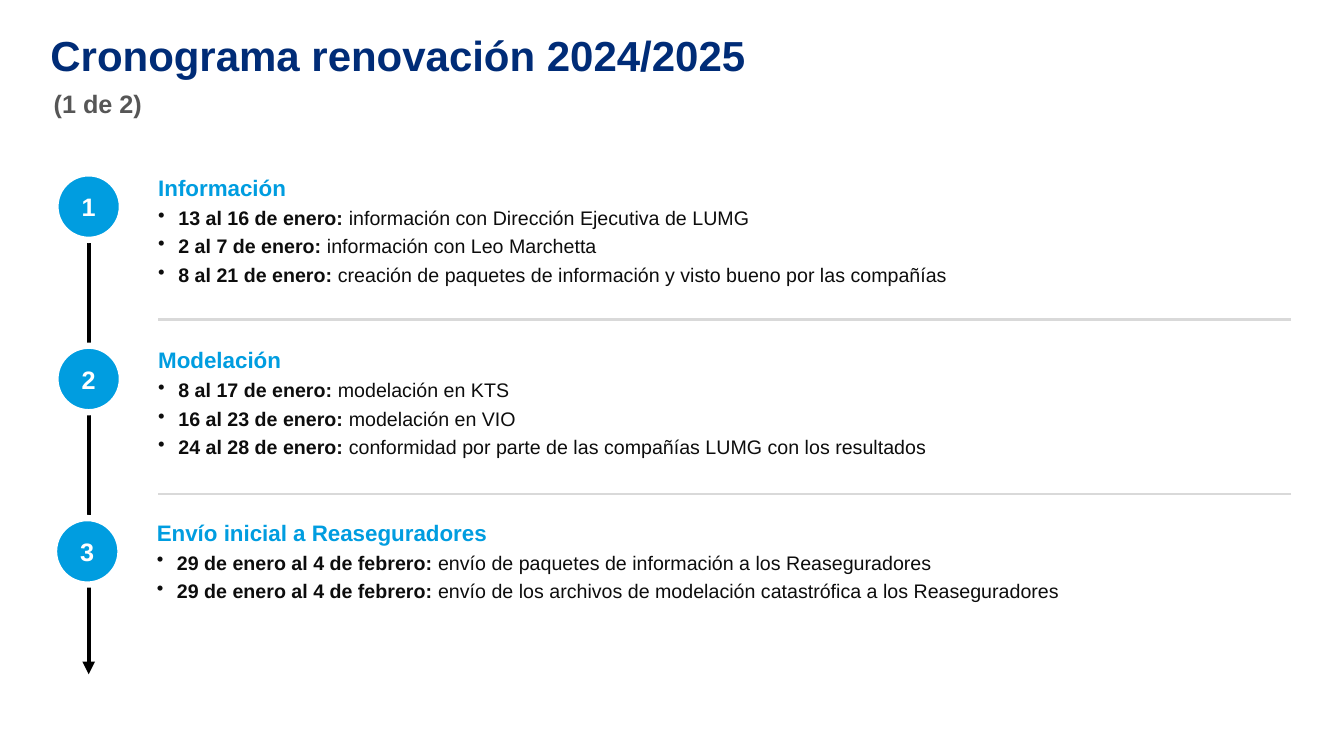
from dataclasses import dataclass

from lxml import etree
from pptx import Presentation
from pptx import util as u
from pptx.dml.color import RGBColor
from pptx.enum import shapes, text
from pptx.oxml.ns import qn


@dataclass(frozen=True)
class Theme:
    font: str = "Arial"
    navy: str = "002C77"
    grey: str = "565656"
    blue: str = "009DE0"
    ink: str = "0D0D0D"
    black: str = "000000"
    rule: str = "D9D9D9"
    white: str = "FFFFFF"
    title: int = 30
    subtitle: int = 18
    heading: int = 16
    body: int = 14


STAGES = [
    ("Información", [
        ("13 al 16 de enero: ", "información con Dirección Ejecutiva de LUMG"),
        ("2 al 7 de enero: ", "información con Leo Marchetta"),
        ("8 al 21 de enero: ", "creación de paquetes de información y visto bueno por las compañías"),
    ]),
    ("Modelación", [
        ("8 al 17 de enero: ", "modelación en KTS"),
        ("16 al 23 de enero: ", "modelación en VIO"),
        ("24 al 28 de enero: ", "conformidad por parte de las compañías LUMG con los resultados"),
    ]),
    ("Envío inicial a Reaseguradores", [
        ("29 de enero al 4 de febrero: ", "envío de paquetes de información a los Reaseguradores"),
        ("29 de enero al 4 de febrero: ",
         "envío de los archivos de modelación catastrófica a los Reaseguradores"),
    ]),
]

FIRST_TOP, PITCH = 123.84, 123.12
CIRCLE_LEFT, CIRCLE_SIZE = 39.6, 47.52
TEXT_LEFT, TEXT_WIDTH, TEXT_HEIGHT = 113.04, 809.28, 98
LAST_SHIFT = -1
INDENT = 14.4


def add_span(para, words, *, font, size, color, bold=False):
    span = para.add_run()
    span.text = words
    span.font.name = font
    span.font.size = u.Pt(size)
    span.font.bold = bold
    span.font.color.rgb = RGBColor.from_string(color)


def clear_margins(frame):
    frame.margin_left = frame.margin_right = frame.margin_top = frame.margin_bottom = 0


class Timeline:
    def __init__(self, page, theme):
        self.page = page
        self.theme = theme

    def words(self, para, words, **style):
        add_span(para, words, font=self.theme.font, **style)

    def text_box(self, left, top, width, height):
        box = self.page.shapes.add_textbox(*map(u.Pt, (left, top, width, height)))
        frame = box.text_frame
        frame.word_wrap = True
        clear_margins(frame)
        return frame

    def bullet(self, frame, dates, task):
        para = frame.add_paragraph()
        para.level = 1
        para.space_before = u.Pt(3.5)
        properties = para._p.get_or_add_pPr()
        properties.set("marL", str(u.Pt(INDENT)))
        properties.set("indent", str(-u.Pt(INDENT)))
        etree.SubElement(properties, qn("a:buChar"), char="•")
        style = dict(size=self.theme.body, color=self.theme.ink)
        self.words(para, dates, bold=True, **style)
        self.words(para, task, **style)

    def stage_text(self, left, top, heading, tasks):
        frame = self.text_box(left, top, TEXT_WIDTH, TEXT_HEIGHT)
        self.words(frame.paragraphs[0], heading, size=self.theme.heading,
                   color=self.theme.blue, bold=True)
        for dates, task in tasks:
            self.bullet(frame, dates, task)

    def circle(self, left, top, number):
        circle = self.page.shapes.add_shape(
            shapes.MSO_SHAPE.OVAL, *map(u.Pt, (left, top, CIRCLE_SIZE, CIRCLE_SIZE)))
        circle.shadow.inherit = False
        circle.fill.solid()
        circle.fill.fore_color.rgb = RGBColor.from_string(self.theme.blue)
        circle.line.color.rgb = RGBColor.from_string(self.theme.white)
        circle.line.width = u.Pt(4.5)
        frame = circle.text_frame
        frame.word_wrap = False
        frame.vertical_anchor = text.MSO_ANCHOR.MIDDLE
        clear_margins(frame)
        para = frame.paragraphs[0]
        para.alignment = text.PP_ALIGN.CENTER
        self.words(para, str(number), size=self.theme.subtitle,
                   color=self.theme.white, bold=True)

    def line(self, start, end, color, width, head=None, tail=None):
        line = self.page.shapes.add_connector(
            shapes.MSO_CONNECTOR.STRAIGHT, *map(u.Pt, (*start, *end)))
        line.line.color.rgb = RGBColor.from_string(color)
        line.line.width = u.Pt(width)
        properties = line._element.spPr
        outline = properties.find(qn("a:ln"))
        for tag, kind in (("a:headEnd", head), ("a:tailEnd", tail)):
            if kind:
                etree.SubElement(outline, qn(tag), type=kind)
        etree.SubElement(properties, qn("a:effectLst"))


def main():
    deck = Presentation()
    deck.slide_width, deck.slide_height = u.Pt(960), u.Pt(540)
    page = deck.slides.add_slide(deck.slide_layouts[6])
    theme = Theme()
    timeline = Timeline(page, theme)

    title = timeline.text_box(36, 28.08, 886.32, 38.88).paragraphs[0]
    title.line_spacing = 0.8
    timeline.words(title, "Cronograma renovación 2024/2025", size=theme.title,
                   color=theme.navy, bold=True)
    subtitle = timeline.text_box(38.4, 63.36, 883.44, 25.2).paragraphs[0]
    timeline.words(subtitle, "(1 de 2)", size=theme.subtitle, color=theme.grey, bold=True)

    timeline.line((63.36, 153.36), (63.36, 481.68), theme.black, 3, "oval", "triangle")
    for index, (heading, tasks) in enumerate(STAGES):
        top = FIRST_TOP + index * PITCH
        shift = LAST_SHIFT if index == len(STAGES) - 1 else 0
        timeline.circle(CIRCLE_LEFT + shift, top, index + 1)
        timeline.stage_text(TEXT_LEFT + shift, top + 0.5, heading, tasks)
    for height in (228.24, 352.8):
        timeline.line((TEXT_LEFT + TEXT_WIDTH, height), (TEXT_LEFT, height), theme.rule, 1.5)

    deck.save("out.pptx")


if __name__ == "__main__":
    main()
